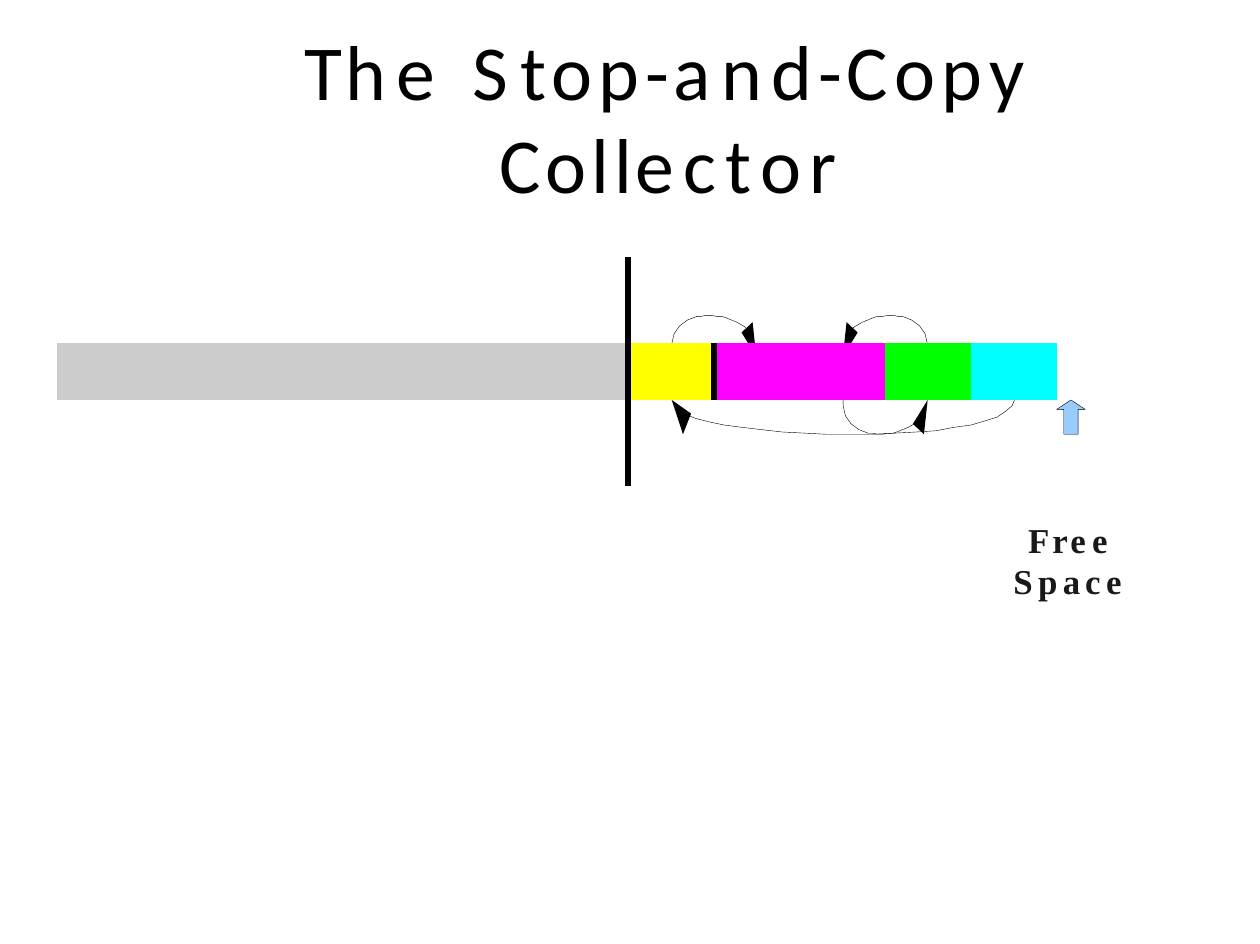
from dataclasses import dataclass

from lxml import etree
from pptx import Presentation
from pptx.dml.color import RGBColor
from pptx.enum.shapes import MSO_SHAPE
from pptx.enum.text import MSO_ANCHOR, MSO_AUTO_SIZE, PP_ALIGN
from pptx.oxml.ns import qn
from pptx.util import Pt

UP_ARROW = MSO_SHAPE.UP_ARROW
CENTER, LEFT = PP_ALIGN.CENTER, PP_ALIGN.LEFT
MIDDLE, TOP = MSO_ANCHOR.MIDDLE, MSO_ANCHOR.TOP
GROW = MSO_AUTO_SIZE.SHAPE_TO_FIT_TEXT
TITLE_ONLY = 5
NO_STYLE = "{2D5ABB26-0587-4C30-8999-92F81FD0307C}"


@dataclass(frozen=True)
class Theme:
    black: str = "000000"
    label: str = "191919"
    arrow: str = "98CCFF"
    used: str = "CCCCCC"
    yellow: str = "FFFF00"
    pink: str = "FF00FF"
    green: str = "00FF00"
    cyan: str = "00FFFF"
    head: str = "Calibri"
    body: str = "Times New Roman"
    big: float = 49
    small: float = 22
    thin: float = 0.25
    thick: float = 4.3


LOOK = Theme()

# Text pieces with their letter spacing in points
TITLE = [("T", 2.4), ("h", 6.1), ("e ", 6.4), ("S", 7.2), ("t", 3.5),
         ("op", 3.9), ("-", 2.6), ("a", 6.6), ("n", 6.1), ("d", 3.6),
         ("-", 2.5), ("Cop", 4.3), ("y ", 4), ("Col", 3.3), ("l", 1.8),
         ("e", 5.8), ("c", 5.9), ("t", 5.3), ("or", 5.2)]
LABEL = [("F", 1.8), ("r", 1.6), ("e", 4), ("e ", 4.1), ("Sp", 3.4),
         ("a", 3), ("c", 3.5), ("e", 4.1)]

# Short pointer: offsets from its start, away from the bar
ARC = [(0, 0), (0, 3.6), (1.5, 10), (5, 15), (10, 18.7), (16, 21),
       (18.7, 21), (21.5, 21.6), (25, 21.6), (28, 21), (31.5, 21),
       (34.5, 20), (37.5, 18.7), (41, 17.3), (46, 14.4), (48.2, 12.2)]
HEAD = [(51, 17.3), (44, 10.8), (53.3, -4.3)]

# Long pointer: from the last block back to the first
LOOP = [(639.4, 252), (638, 255.6), (634, 259), (628.5, 262.8),
        (621.5, 265), (612, 267.8), (601, 269.3), (590, 271.4),
        (577.5, 272.2), (564, 272.9), (550, 273.6), (521, 273.6),
        (507, 272.9), (493, 272.2), (480, 270.7), (468, 269.3),
        (456.5, 267.8), (446.5, 265.7), (438, 263.5), (431.3, 260.6)]
LOOP_HEAD = [(423.4, 252), (430.5, 273.6), (435.6, 260.6)]


def put(item, form):
    for key, value in form.items():
        setattr(item, key, value)


def place(item, left, top, width, height):
    put(item, {"left": Pt(left), "top": Pt(top),
               "width": Pt(width), "height": Pt(height)})


def color(code):
    return RGBColor.from_string(code)


def paint(shape, fill=None, line=None):
    shape.shadow.inherit = False
    if fill:
        shape.fill.solid()
        shape.fill.fore_color.rgb = color(fill)
    else:
        shape.fill.background()
    if line:
        shape.line.color.rgb = color(line)
        shape.line.width = Pt(LOOK.thin)
    else:
        shape.line.fill.background()


def write(shape, parts, font, tone, frame, para, margin, indent):
    box = shape.text_frame
    put(box, {"word_wrap": True, "auto_size": GROW, "margin_left": 0,
              "margin_right": 0, "margin_top": 0, "margin_bottom": 0})
    put(box, frame)
    line = box.paragraphs[0]
    put(line, para)
    props = line._p.get_or_add_pPr()
    props.set("marL", str(Pt(margin)))
    props.set("indent", str(Pt(indent)))
    for text, gap in parts:
        run = line.add_run()
        run.text = text
        put(run.font, font)
        run.font.color.rgb = color(tone)
        run._r.get_or_add_rPr().set("spc", str(round(gap * 100)))


def trace(slide, spots, fill=None, line=None):
    spots = [(Pt(x), Pt(y)) for x, y in spots]
    pen = slide.shapes.build_freeform(*spots[0])
    pen.add_line_segments(spots[1:], close=fill is not None)
    paint(pen.convert_to_shape(), fill, line)


def link(slide, left, top, side, rise, lift=0):
    def move(spots, shift):
        return [(left + side * x, top + rise * (y + shift)) for x, y in spots]

    trace(slide, move(ARC, 0), line=LOOK.black)
    trace(slide, move(HEAD, lift), fill=LOOK.black)


def edge(cell, tag):
    props = cell._tc.get_or_add_tcPr()
    line = etree.Element(qn("a:" + tag), w=str(Pt(LOOK.thick)))
    solid = etree.SubElement(line, qn("a:solidFill"))
    etree.SubElement(solid, qn("a:srgbClr"), val=LOOK.black)
    props.insert(0, line)


def heap(slide):
    frame = slide.shapes.add_table(3, 7, Pt(36), Pt(162), Pt(720), Pt(144))
    grid = frame.table
    put(grid, {"first_row": False, "horz_banding": False})
    grid._tbl.tblPr.find(qn("a:tableStyleId")).text = NO_STYLE
    for col, width in zip(grid.columns, [360] + [54] * 5 + [90]):
        col.width = Pt(width)
    for row, height in zip(grid.rows, (54, 36, 54)):
        row.height = Pt(height)
    for cell in grid.iter_cells():
        cell.fill.background()
    # Memory blocks
    tones = (LOOK.used, LOOK.yellow, LOOK.pink, LOOK.pink,
             LOOK.green, LOOK.cyan)
    for col, tone in enumerate(tones):
        cell = grid.cell(1, col)
        cell.fill.solid()
        cell.fill.fore_color.rgb = color(tone)
    # Divider between the halves, and the mark after the first block
    for row in range(3):
        edge(grid.cell(row, 0), "lnR")
    edge(grid.cell(1, 1), "lnR")
    for row in range(3):
        edge(grid.cell(row, 1), "lnL")
    for row in (0, 2):
        grid.cell(row, 1).merge(grid.cell(row, 6))


def main():
    deck = Presentation()
    put(deck, {"slide_width": Pt(794.16), "slide_height": Pt(594.72)})
    slide = deck.slides.add_slide(deck.slide_layouts[TITLE_ONLY])

    # Title
    title = slide.shapes.title
    place(title, 39.6, 13.7, 715, 118.8)
    write(title, TITLE, {"name": LOOK.head, "size": Pt(LOOK.big)}, LOOK.black,
          {"vertical_anchor": MIDDLE}, {"alignment": CENTER}, 47.5, 0)

    # Free space arrow and label
    arrow = slide.shapes.add_shape(UP_ARROW, Pt(666), Pt(252), Pt(18), Pt(21.6))
    arrow.adjustments[0] = 0.5
    arrow.adjustments[1] = 0.33
    paint(arrow, LOOK.arrow, LOOK.black)
    label = slide.shapes.add_textbox(Pt(638), Pt(327.6), Pt(75), Pt(51.8))
    write(label, LABEL,
          {"name": LOOK.body, "size": Pt(LOOK.small), "bold": True},
          LOOK.label, {"vertical_anchor": TOP},
          {"alignment": LEFT, "line_spacing": Pt(25.8)}, 0.7, 9.4)

    # Pointers between blocks
    link(slide, 423.4, 220.3, 1, -1)
    link(slide, 584.6, 220.3, -1, -1)
    link(slide, 531.4, 252, 1, 1, 4.3)
    trace(slide, LOOP, line=LOOK.black)
    trace(slide, LOOP_HEAD, fill=LOOK.black)

    # Heap bar
    heap(slide)
    deck.save("out.pptx")


if __name__ == "__main__":
    main()
